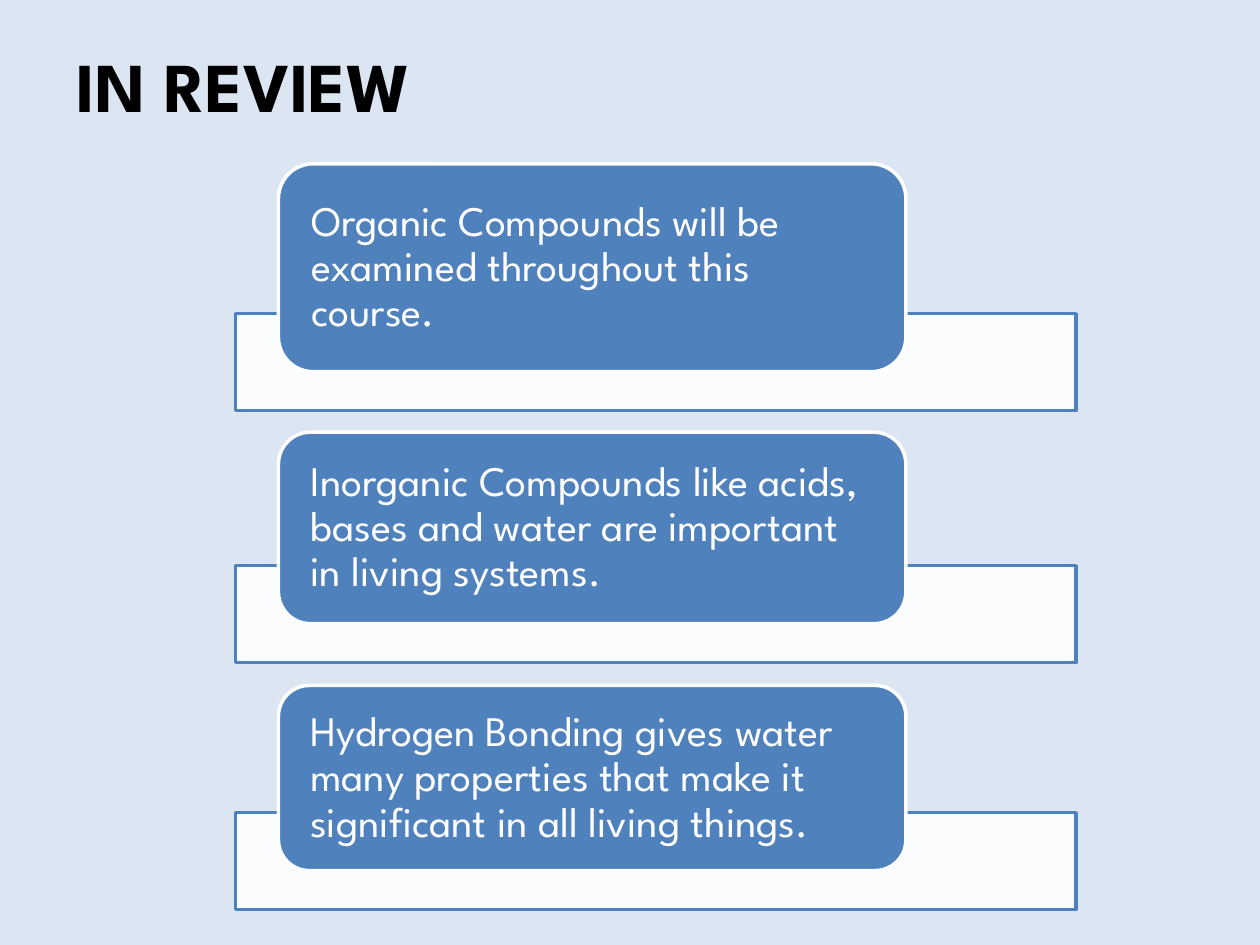
from dataclasses import dataclass

import lxml.etree
import pptx
import pptx.dml.color
import pptx.enum.shapes
import pptx.enum.text
import pptx.oxml.ns
import pptx.slide
import pptx.shapes.autoshape
import pptx.text.text
import pptx.util

Inches = pptx.util.Inches
Color = pptx.dml.color.RGBColor
ShapeType = pptx.enum.shapes.MSO_SHAPE
Anchor = pptx.enum.text.MSO_ANCHOR


@dataclass(frozen=True)
class Theme:
    font: str = "League Spartan"
    background: Color = Color(0xDC, 0xE6, 0xF2)
    accent: Color = Color(0x4F, 0x81, 0xBD)
    white: Color = Color(0xFF, 0xFF, 0xFF)
    black: Color = Color(0, 0, 0)
    title_size: int = 40
    body_size: int = 24
    line_width: int = 2
    bar_opacity: int = 90


@dataclass(frozen=True)
class ReviewPoint:
    text: str
    top: float
    height: float


THEME = Theme()
BAR_LEFT, BAR_WIDTH, BAR_HEIGHT = 1.87, 6.67, 0.77
CARD_LEFT, CARD_WIDTH = 2.21, 4.98
CARD_OVERLAP = 0.46

REVIEW_POINTS = [
    ReviewPoint("Organic Compounds will be examined throughout this course.", 1.3, 1.65),
    ReviewPoint("Inorganic Compounds like acids, bases and water are important in living systems.", 3.43, 1.52),
    ReviewPoint("Hydrogen Bonding gives water many properties that make it significant in all living things.", 5.44, 1.47),
]


def add_run(paragraph: pptx.text.text._Paragraph, text: str, size: int, color: Color, bold: bool = False) -> None:
    run = paragraph.add_run()
    run.text = text
    run.font.name = THEME.font
    run.font.size = pptx.util.Pt(size)
    run.font.bold = bold
    run.font.color.rgb = color


def add_box(
    slide: pptx.slide.Slide, kind: ShapeType, left: float, top: float,
    width: float, height: float, fill: Color, line: Color,
) -> pptx.shapes.autoshape.Shape:
    shape = slide.shapes.add_shape(kind, Inches(left), Inches(top), Inches(width), Inches(height))
    shape.shadow.inherit = False
    shape.fill.solid()
    shape.fill.fore_color.rgb = fill
    shape.line.color.rgb = line
    shape.line.width = pptx.util.Pt(THEME.line_width)
    return shape


def set_opacity(shape: pptx.shapes.autoshape.Shape, percent: int) -> None:
    name = pptx.oxml.ns.qn
    color = shape.fill._xPr.find(name("a:solidFill")).find(name("a:srgbClr"))
    lxml.etree.SubElement(color, name("a:alpha"), val=str(percent * 1000))


def add_title(slide: pptx.slide.Slide, text: str) -> None:
    title = slide.shapes.add_textbox(Inches(0.51), Inches(0.29), Inches(8.5), Inches(1.49))
    title.text_frame.word_wrap = True
    title.text_frame.vertical_anchor = Anchor.TOP
    add_run(title.text_frame.paragraphs[0], text, THEME.title_size, THEME.black, bold=True)


def add_review_point(slide: pptx.slide.Slide, point: ReviewPoint) -> None:
    bar_top = point.top + point.height - CARD_OVERLAP
    bar = add_box(slide, ShapeType.RECTANGLE, BAR_LEFT, bar_top, BAR_WIDTH, BAR_HEIGHT, THEME.white, THEME.accent)
    set_opacity(bar, THEME.bar_opacity)

    card = add_box(
        slide, ShapeType.ROUNDED_RECTANGLE, CARD_LEFT, point.top, CARD_WIDTH, point.height, THEME.accent, THEME.white
    )
    frame = card.text_frame
    frame.word_wrap = True
    frame.vertical_anchor = Anchor.MIDDLE
    frame.margin_left = frame.margin_right = Inches(0.18)
    frame.margin_top = frame.margin_bottom = Inches(0)
    paragraph = frame.paragraphs[0]
    paragraph.alignment = pptx.enum.text.PP_ALIGN.LEFT
    paragraph.line_spacing = 0.9
    add_run(paragraph, point.text, THEME.body_size, THEME.white)


def main() -> None:
    presentation = pptx.Presentation()
    presentation.slide_width = Inches(10)
    presentation.slide_height = Inches(7.5)
    slide = presentation.slides.add_slide(presentation.slide_layouts[6])
    slide.background.fill.solid()
    slide.background.fill.fore_color.rgb = THEME.background
    add_title(slide, "IN REVIEW")
    for point in REVIEW_POINTS:
        add_review_point(slide, point)
    presentation.save("out.pptx")


if __name__ == "__main__":
    main()
